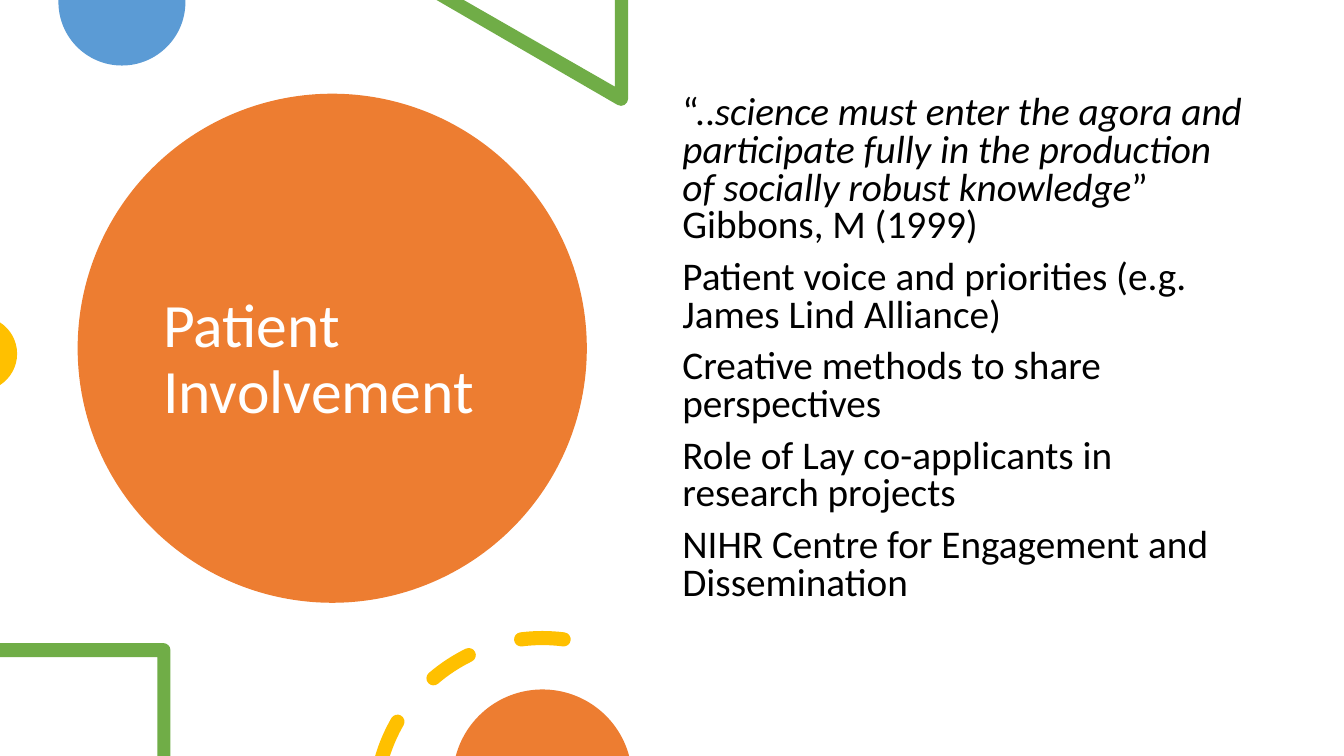
from math import ceil, cos, radians, sin, tan

from pptx import Presentation
from pptx.dml.color import RGBColor
from pptx.enum.shapes import MSO_SHAPE
from pptx.enum.text import MSO_ANCHOR
from pptx.oxml.ns import qn
from pptx.util import Inches, Pt

ORANGE, BLUE, GREEN, YELLOW = "ED7D31", "5B9BD5", "70AD47", "FFC000"


def paint(sp, color):
    sp.fill.solid()
    sp.fill.fore_color.rgb = RGBColor.from_string(color)
    sp.line.fill.background()
    sp.shadow.inherit = False


def arc(cx, cy, r, start, end):
    count = ceil(abs(end - start) / 90)
    step = radians(end - start) / count
    k = 4 / 3 * tan(step / 4)
    segments = [[(cx + r * sin(radians(start)), cy - r * cos(radians(start)))]]
    for i in range(count):
        a = radians(start) + i * step
        b = a + step
        segments.append([
            (cx + r * (sin(a) + k * cos(a)), cy - r * (cos(a) - k * sin(a))),
            (cx + r * (sin(b) - k * cos(b)), cy - r * (cos(b) + k * sin(b))),
            (cx + r * sin(b), cy - r * cos(b)),
        ])
    return segments


prs = Presentation()
prs.slide_width, prs.slide_height = Inches(13.33), Inches(7.5)
s = prs.slides.add_slide(prs.slide_layouts[6])

sp = s.shapes.add_shape(MSO_SHAPE.OVAL, Inches(0.77), Inches(0.93), Inches(5.05), Inches(5.05))
paint(sp, ORANGE)

ring_x, ring_y, ring_r, half = 5.38, 7.99, 1.66, 0.07
outer, inner = ring_r + half, ring_r - half
dashes = []
for start, end, start_cap in [(-73, -60, False), (-40.6, -26.1, True), (-7.3, 7.3, True)]:
    cut = 0 if start_cap else 0.7
    head = ring_x + ring_r * sin(radians(end)), ring_y - ring_r * cos(radians(end))
    tail = ring_x + ring_r * sin(radians(start)), ring_y - ring_r * cos(radians(start))
    dash = arc(ring_x, ring_y, outer, start - cut, end)
    dash += arc(*head, half, end, end + 180)[1:]
    dash += arc(ring_x, ring_y, inner, end, start + cut)[1:]
    if start_cap:
        dash += arc(*tail, half, start + 180, start + 360)[1:]
    dashes.append(dash)

decorations = [
    (BLUE, [[[(0.58, 0)], [(1.84, 0)]] + arc(1.21, 0.02, 0.63, 90, 270)]),
    (GREEN, [[[(6.1, 0)], [(6.1, 0.86)], [(4.6, 0)], [(4.33, 0)]]
             + arc(6.16, 0.98, 0.07, 210, 90) + [[(6.23, 0)]]]),
    (YELLOW, [arc(-0.2, 3.51, 0.37, 33, 147)]),
    (GREEN, [[[(0, 6.38)]] + arc(1.62, 6.45, 0.07, 0, 90)
             + [[(1.69, 7.5)], [(1.56, 7.5)], [(1.56, 6.52)], [(0, 6.52)]]]),
    (YELLOW, dashes),
    (ORANGE, [arc(5.38, 7.73, 0.89, -75, 75)]),
]
for color, contours in decorations:
    builder = None
    sizes = []
    for contour in contours:
        points = [(Inches(x), Inches(y)) for segment in contour for x, y in segment]
        if builder is None:
            builder = s.shapes.build_freeform(*points[0])
        else:
            builder.move_to(*points[0])
        builder.add_line_segments(points[1:], close=True)
        sizes += [len(segment) for segment in contour] + [1]
    sp = builder.convert_to_shape()
    paint(sp, color)
    outline = sp._element.xpath(".//a:path")[0]
    nodes = iter(list(outline))
    for size in sizes:
        node = next(nodes)
        if size == 3:
            node.tag = qn("a:cubicBezTo")
            for extra in (next(nodes), next(nodes)):
                node.append(extra[0])
                outline.remove(extra)

title = [[("Patient Involvement", False)]]
body = [
    [("“..", False),
     ("science must enter the agora and participate fully in the production "
      "of socially robust knowledge", True),
     ("” Gibbons, M (1999)", False)],
    [("Patient voice and priorities (e.g. James Lind Alliance)", False)],
    [("Creative methods to share perspectives", False)],
    [("Role of Lay co-applicants in research projects", False)],
    [("NIHR Centre for Engagement and Dissemination", False)],
]
texts = [
    (title, (1.52, 1.35, 3.54, 4.45), MSO_ANCHOR.MIDDLE, 44, "FFFFFF", 0.9, 0),
    (body, (6.67, 0.9, 5.75, 5.35), MSO_ANCHOR.TOP, 28, "000000", 0.8, 10),
]
for paragraphs, box, anchor, size, color, spacing, before in texts:
    tf = s.shapes.add_textbox(*map(Inches, box)).text_frame
    tf.word_wrap = True
    tf.vertical_anchor = anchor
    for i, runs in enumerate(paragraphs):
        p = tf.paragraphs[0] if i == 0 else tf.add_paragraph()
        p.line_spacing = spacing
        p.space_before = Pt(before)
        for text, italic in runs:
            r = p.add_run()
            r.text = text
            r.font.name = "Calibri"
            r.font.size = Pt(size)
            r.font.italic = italic
            r.font.color.rgb = RGBColor.from_string(color)

prs.save("out.pptx")
